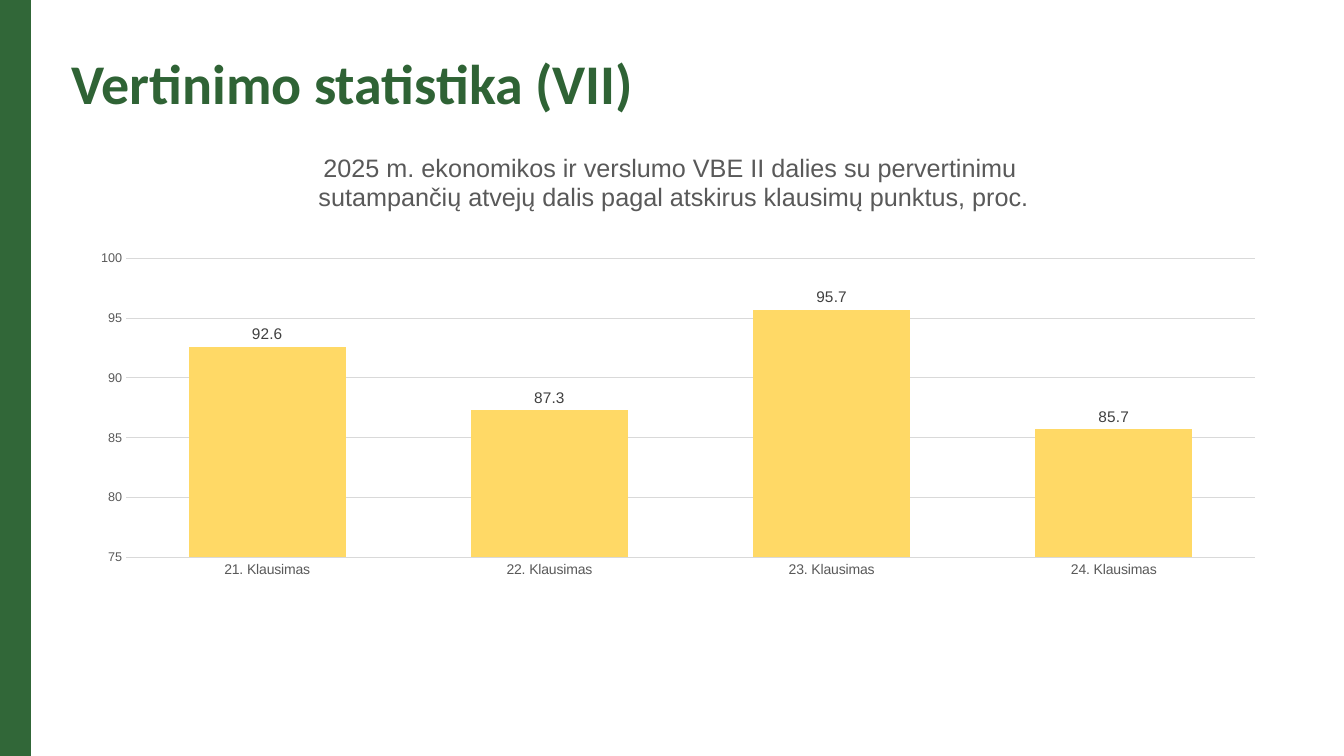
import pptx
import pptx.chart.data
import pptx.dml.color
import pptx.enum.chart
import pptx.enum.text
import pptx.oxml
import pptx.util
from pptx.util import Cm

HUES = {"bar": "316738", "head": "2F6335", "gold": "FFD966",
        "grid": "D9D9D9", "grey": "595959", "dark": "404040"}
RATES = {"21. Klausimas": 92.6, "22. Klausimas": 87.3,
         "23. Klausimas": 95.7, "24. Klausimas": 85.7}
TITLE = ("2025 m. ekonomikos ir verslumo VBE II dalies su pervertinimu \n"
         "sutampančių atvejų dalis pagal atskirus klausimų punktus, proc.")
PLOT = {"x": 0.042, "y": 0.237, "w": 0.942, "h": 0.612}
SPOT = {"x": 0.2, "y": 0.015}
PLAIN = "{2D5ABB26-0587-4C30-8999-92F81FD0307C}"


def tint(name):
    return pptx.dml.color.RGBColor.from_string(HUES[name])


def assign(item, **values):
    for key, value in values.items():
        setattr(item, key, value)


def paint(fill, hue):
    fill.solid()
    fill.fore_color.rgb = tint(hue)


def place(part, index, shares, target=""):
    """Fix a chart part at the given shares of the chart's size."""
    for old in part.findall(pptx.oxml.ns.qn("c:layout")):
        part.remove(old)
    modes = '<c:xMode val="edge"/><c:yMode val="edge"/>'
    sides = "".join(f'<c:{k} val="{v}"/>' for k, v in shares.items())
    part.insert(index, pptx.oxml.parse_xml(
        f'<c:layout {pptx.oxml.ns.nsdecls("c")}><c:manualLayout>'
        f'{target}{modes}{sides}</c:manualLayout></c:layout>'))


class Deck:
    """Holds the text style and the current slide."""

    def __init__(self, wide, high):
        self.show = pptx.Presentation()
        assign(self.show, slide_width=wide, slide_height=high)
        self.slide = self.show.slides.add_slide(self.show.slide_layouts[6])

    def style(self, font, size, hue, name="Arial", bold=False):
        assign(font, size=pptx.util.Pt(size), name=name, bold=bold)
        font.color.rgb = tint(hue)

    def band(self, *box):
        """Draw the side band as a borderless table of one cell."""
        table = self.slide.shapes.add_table(1, 1, *box).table
        mark = pptx.oxml.ns.qn("a:tableStyleId")
        table._tbl.tblPr.find(mark).text = PLAIN
        cell = table.cell(0, 0)
        assign(cell, margin_left=0, margin_right=0)
        paint(cell.fill, "bar")

    def head(self, text, *box):
        frame = self.slide.shapes.add_textbox(*box).text_frame
        assign(frame, word_wrap=True, text=text,
               vertical_anchor=pptx.enum.text.MSO_ANCHOR.MIDDLE)
        line = frame.paragraphs[0]
        line.line_spacing = 0.9
        self.style(line.runs[0].font, 40, "head", "Calibri", True)

    def axis(self, axis, size):
        mark = pptx.enum.chart.XL_TICK_MARK.NONE
        assign(axis, major_tick_mark=mark, minor_tick_mark=mark)
        self.style(axis.tick_labels.font, size, "grey")

    def rule(self, line):
        line.color.rgb = tint("grid")
        line.width = pptx.util.Pt(0.75)

    def title(self, chart, text):
        title = chart.chart_title
        title.include_in_layout = False
        title.text_frame.text = text
        for line in title.text_frame.paragraphs:
            self.style(line.runs[0].font, 18, "grey")
        place(title._element, 1, SPOT)

    def chart(self, title, rates, *box):
        data = pptx.chart.data.CategoryChartData(number_format="0.0")
        data.categories = rates.keys()
        data.add_series("Series 1", rates.values())
        kind = pptx.enum.chart.XL_CHART_TYPE.COLUMN_CLUSTERED
        chart = self.slide.shapes.add_chart(kind, *box, data).chart
        self.style(chart.font, 10, "grey")
        assign(chart, has_legend=False, has_title=True)
        self.title(chart, title)

        self.axis(chart.category_axis, 10)
        self.rule(chart.category_axis.format.line)
        scale = chart.value_axis
        self.axis(scale, 9)
        assign(scale, minimum_scale=75, maximum_scale=100, major_unit=5)
        assign(scale.tick_labels, number_format="0",
               number_format_is_linked=False)
        scale.format.line.fill.background()
        self.rule(scale.major_gridlines.format.line)

        plot = chart.plots[0]
        assign(plot, gap_width=80, overlap=13, vary_by_categories=False,
               has_data_labels=True)
        paint(plot.series[0].format.fill, "gold")
        labels = plot.data_labels
        assign(labels, show_value=True, number_format="0.0",
               number_format_is_linked=False,
               position=pptx.enum.chart.XL_LABEL_POSITION.OUTSIDE_END)
        self.style(labels.font, 11, "dark")
        place(plot._element.getparent(), 0, PLOT,
              '<c:layoutTarget val="inner"/>')


def main():
    deck = Deck(Cm(33.87), Cm(19.05))
    deck.band(0, 0, Cm(0.79), Cm(19.05))
    deck.head("Vertinimo statistika (VII)",
              Cm(1.55), Cm(0.33), Cm(29.21), Cm(3.68))
    deck.chart(TITLE, RATES, Cm(1.91), Cm(3.59), Cm(30.2), Cm(12.32))
    deck.show.save("out.pptx")


if __name__ == "__main__":
    main()
